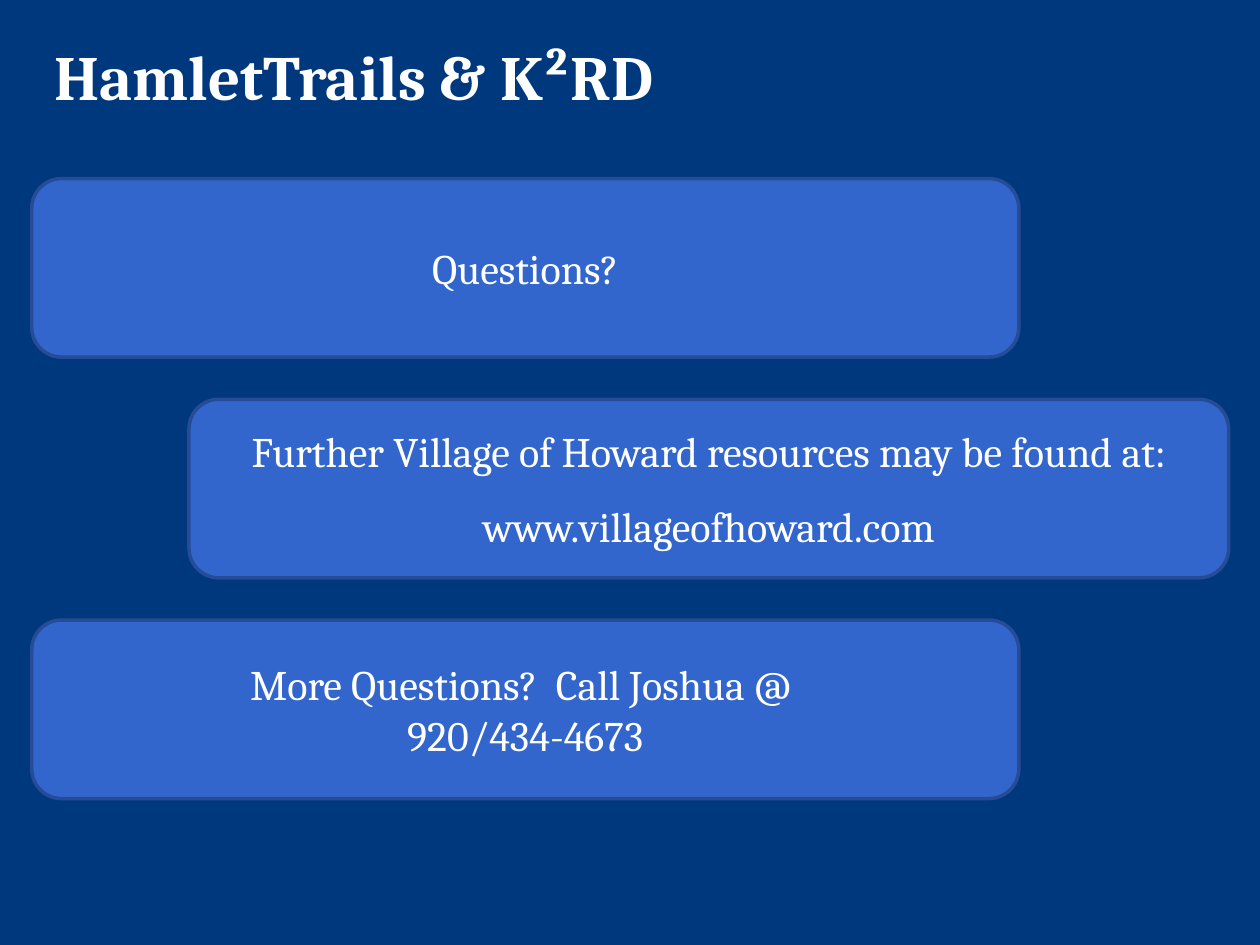
import pptx
import pptx.util
import pptx.dml.color
import pptx.enum.shapes
import pptx.enum.text
from pptx.util import Cm, Pt

ALIGN = pptx.enum.text.PP_ALIGN
MIDDLE = pptx.enum.text.MSO_ANCHOR.MIDDLE


def rgb(value):
    return pptx.dml.color.RGBColor.from_string(value)


def format_text(p, size, align, bold=False):
    p.alignment = align
    for r in p.runs:
        r.font.name = "Cambria"
        r.font.size = Pt(size)
        r.font.bold = bold
        r.font.color.rgb = rgb("FFFFFF")


# Slide and background
prs = pptx.Presentation()
prs.slide_width, prs.slide_height = Cm(25.4), Cm(19.05)
s = prs.slides.add_slide(prs.slide_layouts[5])
s.background.fill.solid()
s.background.fill.fore_color.rgb = rgb("00387D")

# Title
title = s.shapes.title
title.left, title.top, title.width, title.height = Cm(0.84), Cm(0.51), Cm(19.69), Cm(2.03)
tf = title.text_frame
tf.text = "HamletTrails & K²RD"
tf.vertical_anchor = MIDDLE
format_text(tf.paragraphs[0], 36, ALIGN.LEFT, bold=True)

# Staggered message boxes: left, width, lines, space between lines
boxes = [
    (0.64, 19.9, ["Questions?"], 0),
    (3.81, 20.96, ["Further Village of Howard resources may be found at:",
                   "www.villageofhoward.com"], 14),
    (0.64, 19.9, ["More Questions?  Call Joshua @ ", "920/434-4673"], 0),
]
for i, (left, width, lines, gap) in enumerate(boxes):
    sp = s.shapes.add_shape(pptx.enum.shapes.MSO_SHAPE.ROUNDED_RECTANGLE,
                            Cm(left), Cm(3.6 + 4.45 * i), Cm(width), Cm(3.6))
    sp.shadow.inherit = False
    sp.fill.solid()
    sp.fill.fore_color.rgb = rgb("3366CC")
    sp.line.color.rgb = rgb("264B97")
    sp.line.width = Pt(2)
    tf = sp.text_frame
    tf.word_wrap = True
    tf.vertical_anchor = MIDDLE
    tf.text = "\n".join(lines)
    for p in tf.paragraphs:
        format_text(p, 24, ALIGN.CENTER)
    for p in tf.paragraphs[1:]:
        p.space_before = Pt(gap)

prs.save("out.pptx")
